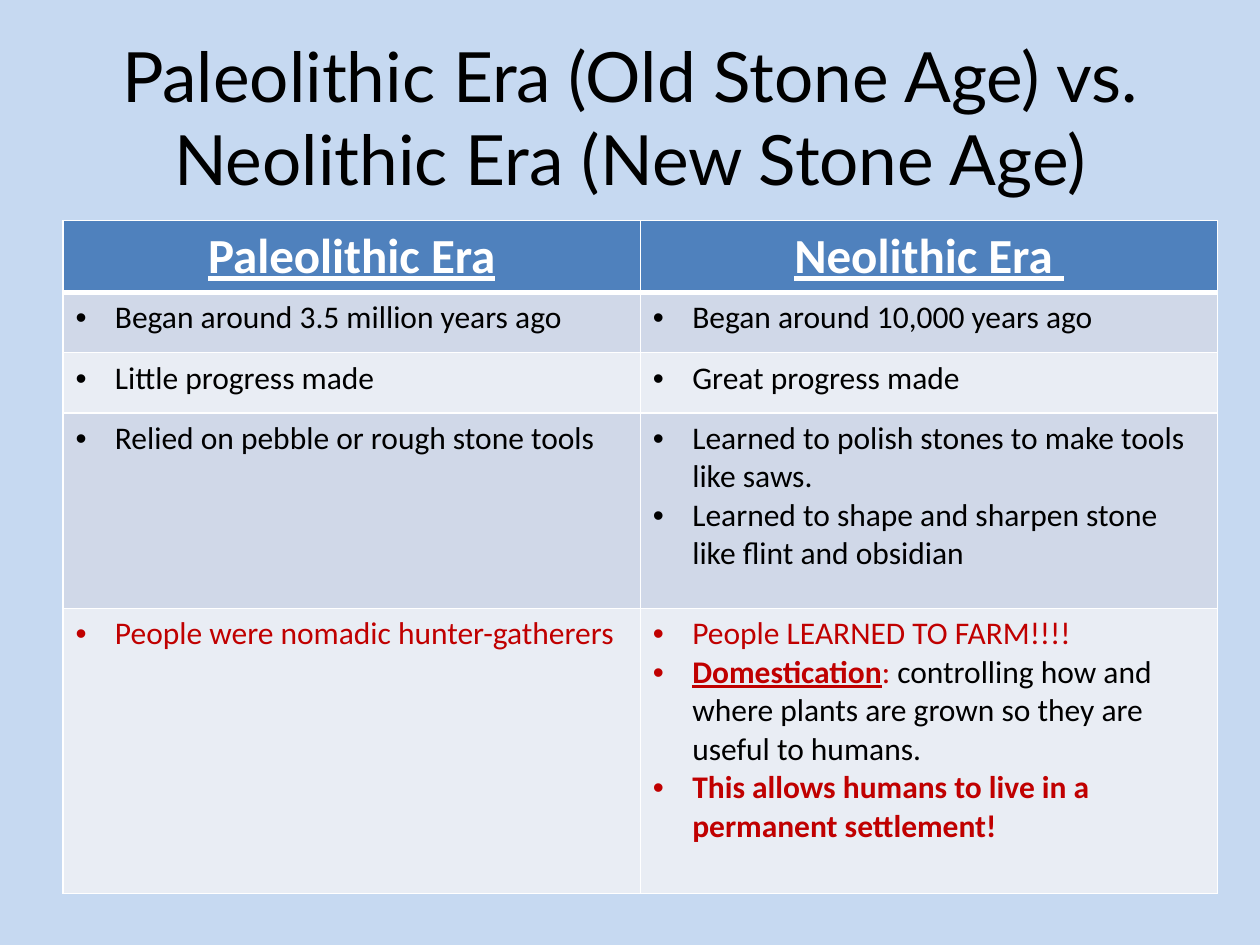
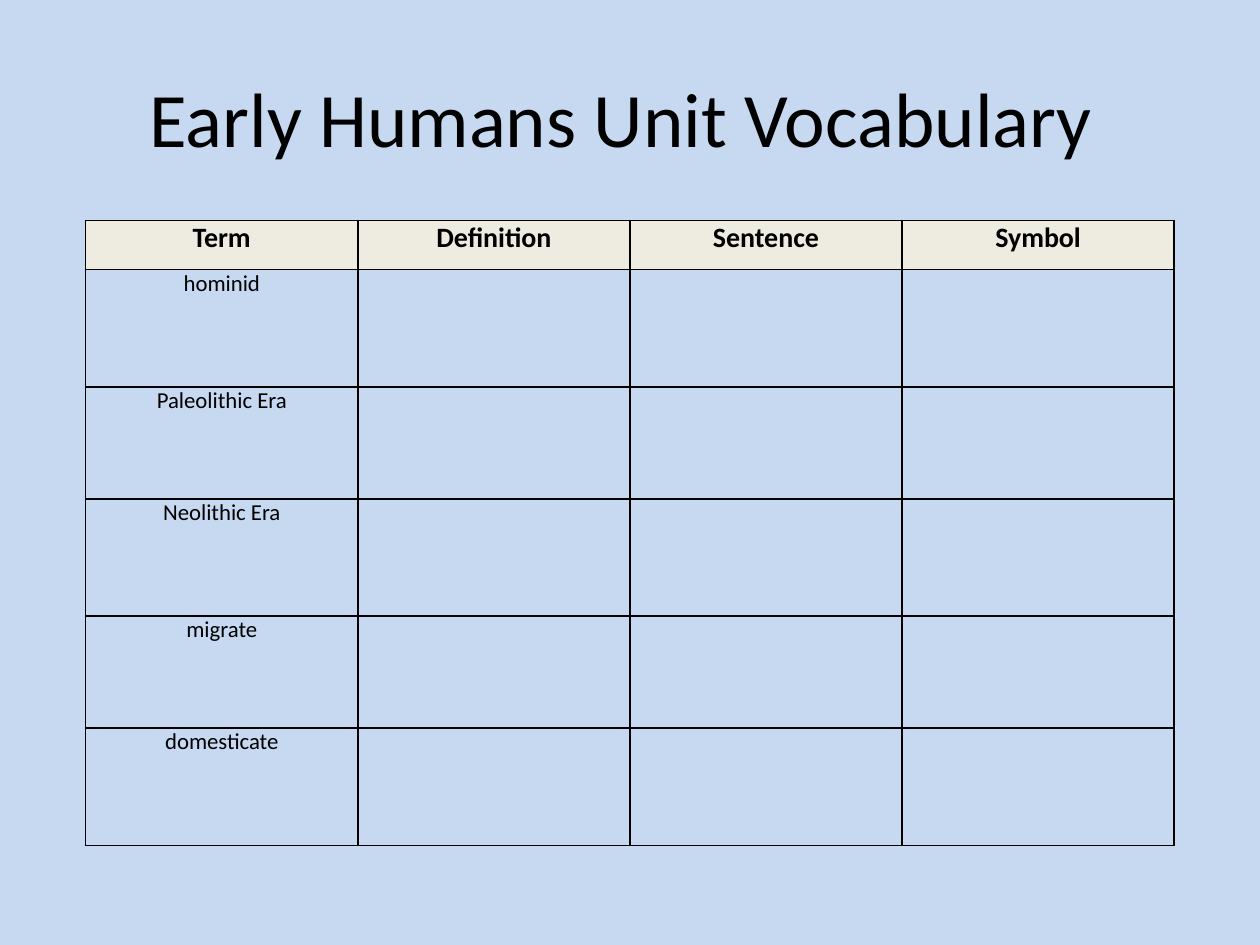
"""Builds two slides on early humans: an era comparison and a vocabulary grid."""
from dataclasses import dataclass

from lxml.etree import SubElement
from pptx import Presentation
from pptx.dml.color import RGBColor
from pptx.enum.text import MSO_ANCHOR as Anchor, PP_ALIGN as Align
from pptx.oxml.ns import qn
from pptx.util import Inches, Length, Pt

GRID = 0.25
COLS, ROWS = 40, 30
TITLE_TOP, TITLE_ROWS, TABLE_TOP = 1.2, 5, 7
INDENT = 1.25
SKY, BLACK, WHITE, RED = "C6D9F1", "000000", "FFFFFF", "C00000"
BLUE, BAND_DARK, BAND_LIGHT, CREAM = "4F81BD", "D0D8E8", "E9EDF4", "EEECE1"
FONT = "Calibri"


@dataclass(frozen=True)
class Span:
    text: str
    color: str = BLACK
    bold: bool = False
    underline: bool = False


@dataclass(frozen=True)
class Style:
    size: float
    bullet: bool = False
    side: float = 0.4
    edge: float = 0.2


@dataclass(frozen=True)
class Title:
    text: str
    left: float
    size: float
    font: str = FONT


@dataclass(frozen=True)
class Grid:
    left: float
    col: float
    rows: tuple[float, ...]
    border: str


ERA_TITLE = Title("Paleolithic Era (Old Stone Age) vs. Neolithic Era (New Stone Age)", 1, 39.6, "Lato")
ERA_GRID = Grid(2, 18.33, (2.28, 1.92, 1.92, 6.2, 9.04), WHITE)
ERA_HEAD, ERA_BODY = Style(28), Style(18, bullet=True)
ERAS = ("Paleolithic Era", "Neolithic Era ")
ERA_ROWS = (
    ([[Span("Began around 3.5 million years ago")]],
     [[Span("Began around 10,000 years ago")]]),
    ([[Span("Little progress made")]],
     [[Span("Great progress made")]]),
    ([[Span("Relied on pebble or rough stone tools")]],
     [[Span("Learned to polish stones to make tools like saws.")],
      [Span("Learned to shape and sharpen stone like flint and obsidian")]]),
    ([[Span("People were nomadic hunter-gatherers", RED)]],
     [[Span("People LEARNED TO FARM!!!!", RED)],
      [Span("Domestication", RED, True, True), Span(": ", RED),
       Span("controlling how and where plants are grown so they are useful to humans.")],
      [Span("This allows humans to live in a permanent settlement!", RED, True)]]),
)

VOCAB_TITLE = Title("Early Humans Unit Vocabulary ", 2, 44)
VOCAB_GRID = Grid(2.72, 8.64, (1.56, 3.72, 3.56, 3.72, 3.56, 3.72), BLACK)
VOCAB_HEAD, VOCAB_BODY = Style(16, side=0.28, edge=0), Style(13, side=0.28, edge=0)
HEADINGS = ("Term", "Definition", "Sentence", "Symbol")
TERMS = ("hominid", "Paleolithic Era", "Neolithic Era", "migrate", "domesticate")


def units(n: float) -> Length:
    return Inches(n * GRID)


def rgb(color: str) -> RGBColor:
    return RGBColor.from_string(color)


def style_font(font, span: Span) -> None:
    font.color.rgb = rgb(span.color)
    font.bold, font.underline = span.bold, span.underline


def add_slide(prs, title: Title):
    s = prs.slides.add_slide(prs.slide_layouts[6])
    s.background.fill.solid()
    s.background.fill.fore_color.rgb = rgb(SKY)
    box = s.shapes.add_textbox(units(title.left), units(TITLE_TOP),
                               units(COLS - 2 * title.left), units(TITLE_ROWS))
    tf = box.text_frame
    tf.word_wrap, tf.vertical_anchor = True, Anchor.MIDDLE
    p = tf.paragraphs[0]
    p.text, p.alignment = title.text, Align.CENTER
    p.font.name, p.font.size = title.font, Pt(title.size)
    p.font.color.rgb = rgb(BLACK)
    return s


def add_grid(s, grid: Grid, cols: int):
    frame = s.shapes.add_table(len(grid.rows), cols, units(grid.left), units(TABLE_TOP),
                               units(grid.col * cols), units(sum(grid.rows)))
    table = frame.table
    table.first_row = table.horz_banding = False
    for col in table.columns:
        col.width = units(grid.col)
    for row, height in zip(table.rows, grid.rows):
        row.height = units(height)
    return table


def set_borders(cell, color: str, top: float = 1, bottom: float = 1) -> None:
    tc_pr = cell._tc.get_or_add_tcPr()
    for side, width in (("L", 1), ("R", 1), ("T", top), ("B", bottom)):
        line = SubElement(tc_pr, qn(f"a:ln{side}"), w=str(Pt(width)))
        fill = SubElement(line, qn("a:solidFill"))
        SubElement(fill, qn("a:srgbClr"), val=color)


def set_fill(cell, color: str | None) -> None:
    if color is None:
        cell.fill.background()
    else:
        cell.fill.solid()
        cell.fill.fore_color.rgb = rgb(color)


def add_bullet(p) -> None:
    p_pr = p._p.get_or_add_pPr()
    p_pr.set("marL", str(units(INDENT)))
    p_pr.set("indent", str(-units(INDENT)))
    SubElement(p_pr, qn("a:buFont"), typeface="Arial")
    SubElement(p_pr, qn("a:buChar"), char="•")


def write_cell(cell, paragraphs: list[list[Span]], style: Style) -> None:
    cell.margin_left = cell.margin_right = units(style.side)
    cell.margin_top = cell.margin_bottom = units(style.edge)
    tf = cell.text_frame
    for i, spans in enumerate(paragraphs):
        p = tf.add_paragraph() if i else tf.paragraphs[0]
        if style.bullet:
            add_bullet(p)
        else:
            p.alignment = Align.CENTER
        p.font.name, p.font.size = FONT, Pt(style.size)
        for span in spans:
            r = p.add_run()
            r.text = span.text
            style_font(p.font if len(spans) == 1 else r.font, span)


def add_era_slide(prs) -> None:
    s = add_slide(prs, ERA_TITLE)
    table = add_grid(s, ERA_GRID, len(ERAS))
    heads = tuple([[Span(era, WHITE, True, True)]] for era in ERAS)
    for i, row in enumerate((heads, *ERA_ROWS)):
        fill = (BAND_DARK if i % 2 else BAND_LIGHT) if i else BLUE
        for j, paragraphs in enumerate(row):
            cell = table.cell(i, j)
            set_borders(cell, ERA_GRID.border, top=3 if i == 1 else 1, bottom=1 if i else 3)
            set_fill(cell, fill)
            write_cell(cell, paragraphs, ERA_BODY if i else ERA_HEAD)


def add_vocabulary_slide(prs) -> None:
    s = add_slide(prs, VOCAB_TITLE)
    table = add_grid(s, VOCAB_GRID, len(HEADINGS))
    for cell in table.iter_cells():
        set_borders(cell, VOCAB_GRID.border)
        set_fill(cell, None)
    for j, heading in enumerate(HEADINGS):
        set_fill(table.cell(0, j), CREAM)
        write_cell(table.cell(0, j), [[Span(heading, bold=True)]], VOCAB_HEAD)
    for i, term in enumerate(TERMS, 1):
        write_cell(table.cell(i, 0), [[Span(term)]], VOCAB_BODY)


def main() -> None:
    prs = Presentation()
    prs.slide_width, prs.slide_height = units(COLS), units(ROWS)
    add_era_slide(prs)
    add_vocabulary_slide(prs)
    prs.save("out.pptx")


if __name__ == "__main__":
    main()
